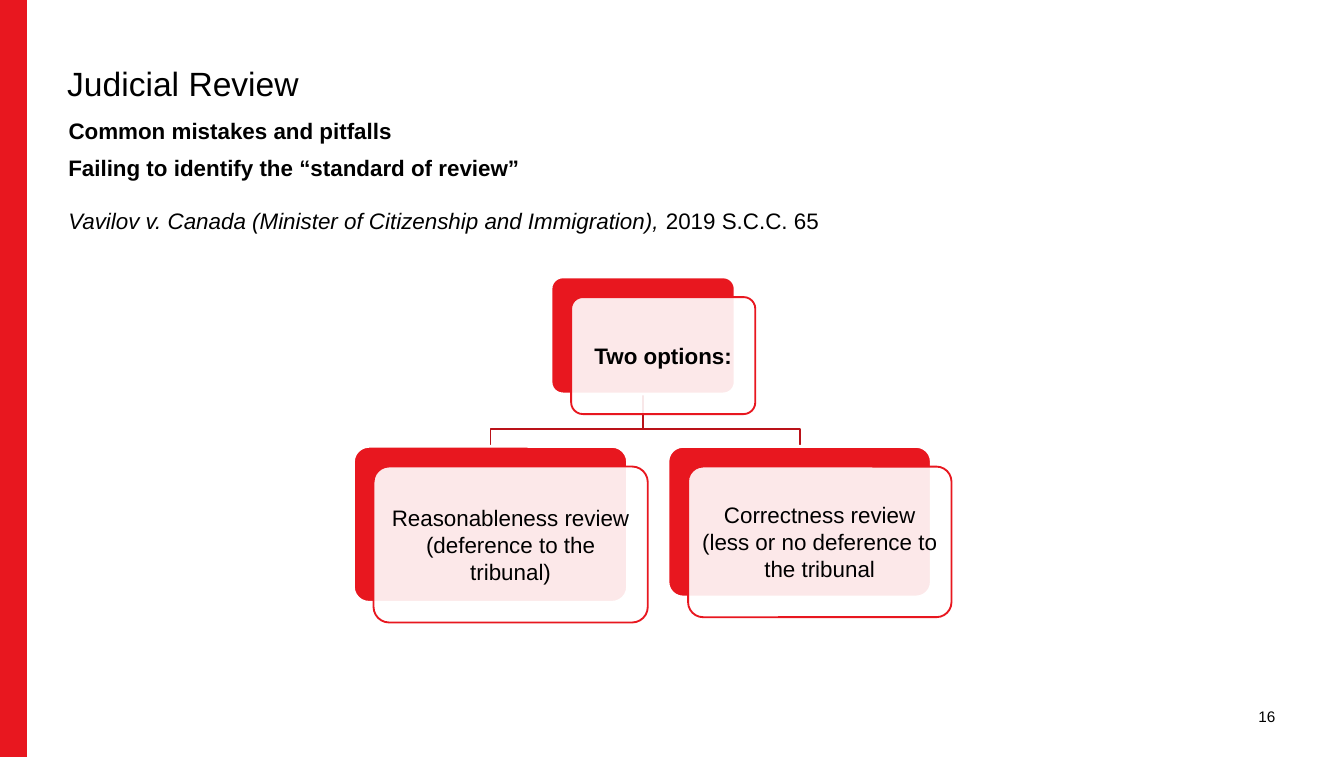
from pptx import Presentation
from pptx.dml.color import RGBColor
from pptx.enum.shapes import MSO_SHAPE as Shape
from pptx.enum.text import MSO_ANCHOR as Anchor, MSO_AUTO_SIZE as Fit, PP_ALIGN as Align
from pptx.oxml.ns import qn
from pptx.util import Inches, Pt
from lxml.etree import SubElement

COLORS = {"red": "E8171F", "dark_red": "BA1219", "white": "FFFFFF", "black": "000000"}
SIDES = ("left", "top", "width", "height")


def rgb(name):
    return RGBColor.from_string(COLORS[name])


def set_all(target, values):
    for name, value in values.items():
        setattr(target, name, value)


class ReviewSlide:
    font = "Arial"
    text_size = 12
    card_shift = (0.15, 0.15)

    def __init__(self, deck):
        self.page = deck.slides.add_slide(deck.slide_layouts[1])

    def frame(self, box, inset=0.0, anchor=Anchor.TOP):
        frame = box.text_frame
        margins = {f"margin_{side}": Inches(inset) for side in ("left", "top", "right", "bottom")}
        set_all(frame, {"word_wrap": True, "auto_size": Fit.NONE,
                        "vertical_anchor": anchor, **margins})
        return frame

    def fill_para(self, para, spans, size=text_size, align=Align.LEFT, **layout):
        """Fill a paragraph with spans, each a (text, font values) pair."""
        set_all(para, {"alignment": align, **layout})
        for text, style in spans:
            span = para.add_run()
            span.text = text
            set_all(span.font, {"name": self.font, "size": Pt(size), **style})
            span.font.color.rgb = rgb("black")

    def placeholder(self, index, at, text, size, bold=False, indent=0.0, **layout):
        box = self.page.placeholders[index]
        set_all(box, dict(zip(SIDES, map(Inches, at))))
        para = self.frame(box).paragraphs[0]
        if index:
            props = para._p.get_or_add_pPr()
            props.set("marL", str(Inches(indent)))
            props.set("indent", "0")
            SubElement(props, qn("a:buNone"))
        self.fill_para(para, [(text, {"bold": bold})], size, space_before=Pt(0), **layout)

    def text_box(self, at, paragraphs, inset=0.0, anchor=Anchor.TOP, gap=0, **style):
        box = self.page.shapes.add_textbox(*map(Inches, at))
        frame = self.frame(box, inset, anchor)
        frame.margin_left = frame.margin_right = Inches(inset * 2)
        for number, spans in enumerate(paragraphs):
            para = frame.add_paragraph() if number else frame.paragraphs[0]
            self.fill_para(para, spans, space_before=Pt(gap if number else 0), **style)

    def block(self, at, fill, line=None, weight=1.0, kind=Shape.ROUNDED_RECTANGLE, opacity=None):
        box = self.page.shapes.add_shape(kind, *map(Inches, at))
        box.shadow.inherit = False
        box.fill.solid()
        box.fill.fore_color.rgb = rgb(fill)
        if opacity:
            color = box._element.spPr.find(qn("a:solidFill")).find(qn("a:srgbClr"))
            SubElement(color, qn("a:alpha")).set("val", str(opacity * 1000))
        if line:
            box.line.color.rgb = rgb(line)
            box.line.width = Pt(weight)
        else:
            box.line.fill.background()
        return box

    def card(self, at, text, bold=False):
        """Draw a red card with a translucent white text card shifted over it."""
        left, top, width, height = at
        across, down = self.card_shift
        back = self.block(at, "red", "white", 1.5)
        front = self.block((left + across, top + down, width, height), "white", "red", opacity=90)
        for box in (back, front):
            box.adjustments[0] = 0.1
        para = self.frame(front, 0.05, Anchor.MIDDLE).paragraphs[0]
        self.fill_para(para, [(text, {"bold": bold})], align=Align.CENTER)

    def branch(self, parent, child, bend):
        """Draw the elbow from the foot of one card to the head of another."""
        start_x = parent[0] + parent[2] / 2
        end_x = child[0] + child[2] / 2
        points = [(start_x, bend), (end_x, bend), (end_x, child[1])]
        builder = self.page.shapes.build_freeform(
            Inches(start_x), Inches(parent[1] + parent[3]), scale=1.0)
        builder.add_line_segments([(Inches(x), Inches(y)) for x, y in points], close=False)
        elbow = builder.convert_to_shape()
        elbow.shadow.inherit = False
        elbow.fill.background()
        elbow.line.color.rgb = rgb("dark_red")
        elbow.line.width = Pt(1)


def main():
    deck = Presentation()
    deck.slide_width, deck.slide_height = Inches(10), Inches(5.63)
    slide = ReviewSlide(deck)

    slide.block((0, 0, 0.2, 5.63), "red", kind=Shape.RECTANGLE)
    slide.text_box((8.93, 5.03, 0.56, 0.6), [[("16", {})]],
                   anchor=Anchor.MIDDLE, size=8.2, align=Align.RIGHT)
    slide.placeholder(0, (0.5, 0.5, 9, 0.37), "Judicial Review", 18, line_spacing=0.9)
    slide.placeholder(1, (0.5, 0.87, 9, 0.23), "Common mistakes and pitfalls", 12,
                      bold=True, indent=0.01)
    slide.text_box((0.41, 1.1, 8.59, 0.73), [
        [("Failing to identify the “standard of review”", {"bold": True})],
        [("Vavilov v. Canada (Minister of Citizenship and Immigration), ", {"italic": True}),
         ("2019 S.C.C. 65", {})],
    ], inset=0.05, gap=14)

    root = (4.1, 2.06, 1.37, 0.87)
    options = [
        ((2.63, 3.32, 2.04, 1.16), "Reasonableness review (deference to the tribunal)"),
        ((4.97, 3.32, 1.96, 1.12), "Correctness review (less or no deference to the tribunal"),
    ]
    for at, _ in options:
        slide.branch(root, at, bend=3.19)
    slide.card(root, "Two options:", bold=True)
    for at, text in options:
        slide.card(at, text)

    deck.save("out.pptx")


if __name__ == "__main__":
    main()
